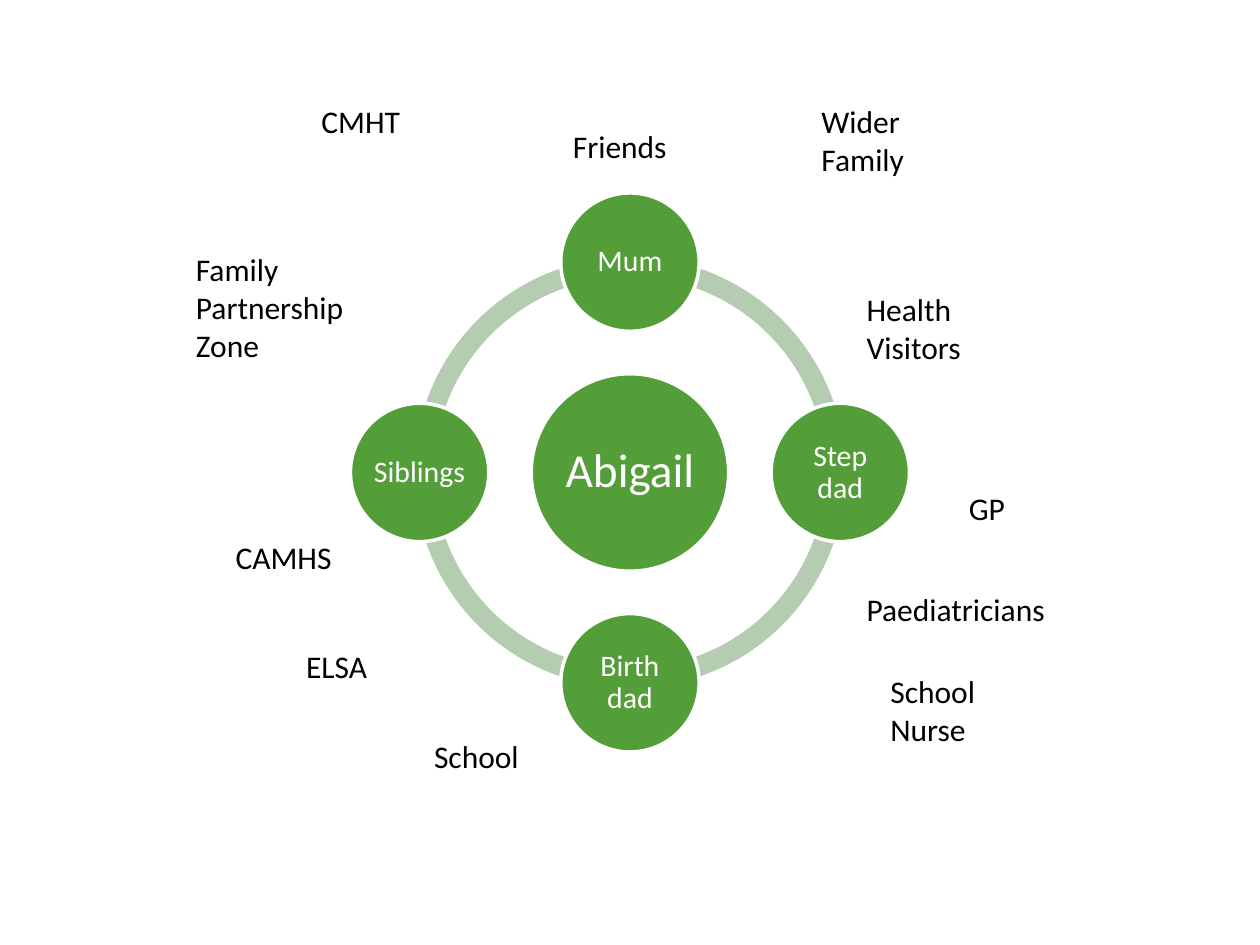
import pptx
import pptx.util
import pptx.dml.color
import pptx.enum.shapes
import pptx.enum.text

Cm, Pt = pptx.util.Cm, pptx.util.Pt
SHAPE = pptx.enum.shapes.MSO_SHAPE
ALIGN = pptx.enum.text.PP_ALIGN
ANCHOR = pptx.enum.text.MSO_ANCHOR

GREEN = pptx.dml.color.RGBColor(0x54, 0x9E, 0x39)
PALE_GREEN = pptx.dml.color.RGBColor(0xB4, 0xCC, 0xAF)
WHITE = pptx.dml.color.RGBColor(0xFF, 0xFF, 0xFF)
BLACK = pptx.dml.color.RGBColor(0x00, 0x00, 0x00)

SLIDE_WIDTH, SLIDE_HEIGHT = 25.4, 19.05
CENTRE_X, CENTRE_Y = SLIDE_WIDTH / 2, SLIDE_HEIGHT / 2
RING_SIZE = 8.69
ORBIT = 4.24


def write(shape, text, size=18, color=BLACK, align=ALIGN.LEFT, anchor=ANCHOR.TOP,
          spacing=1.0, inset=None, indent=0, wrap=True):
    """Fill a shape with one formatted paragraph; inset and indent are in cm."""
    frame = shape.text_frame
    frame.word_wrap = wrap
    frame.vertical_anchor = anchor
    if inset is not None:
        frame.margin_left = frame.margin_right = Cm(inset)
        frame.margin_top = frame.margin_bottom = Cm(inset)
    paragraph = frame.paragraphs[0]
    paragraph.alignment = align
    paragraph.line_spacing = spacing
    if indent:
        paragraph._p.get_or_add_pPr().set("marL", str(Cm(indent)))
    run = paragraph.add_run()
    run.text = text
    run.font.name = "Calibri"
    run.font.size = Pt(size)
    run.font.color.rgb = color


def add_centred(kind, x, y, size, fill):
    """Add a square-framed shape around the point x, y (cm)."""
    shape = slide.shapes.add_shape(
        kind, Cm(x - size / 2), Cm(y - size / 2), Cm(size), Cm(size))
    shape.shadow.inherit = False
    shape.fill.solid()
    shape.fill.fore_color.rgb = fill
    shape.line.fill.background()
    return shape


deck = pptx.Presentation()
deck.slide_width, deck.slide_height = Cm(SLIDE_WIDTH), Cm(SLIDE_HEIGHT)
slide = deck.slides.add_slide(deck.slide_layouts[6])

# Ring of four quarter arcs; a quarter turn is 54 in adjustment units
QUARTER = 54
for start in (2, 1, 0, 3):
    arc = add_centred(SHAPE.BLOCK_ARC, CENTRE_X, CENTRE_Y, RING_SIZE, PALE_GREEN)
    arc.adjustments[0] = start * QUARTER
    arc.adjustments[1] = (start + 1) % 4 * QUARTER
    arc.adjustments[2] = 0.046

# The child in the middle, close family around: direction x, y, diameter, text size
people = [
    ("Abigail", 0, 0, 3.98, 27),
    ("Mum", 0, -1, 2.79, 17),
    ("Step dad", 1, 0, 2.79, 17),
    ("Birth dad", 0, 1, 2.79, 17),
    ("Siblings", -1, 0, 2.79, 17),
]
for person, across, down, diameter, text_size in people:
    circle = add_centred(SHAPE.OVAL, CENTRE_X + across * ORBIT,
                         CENTRE_Y + down * ORBIT, diameter, GREEN)
    circle.line.color.rgb = WHITE
    circle.line.width = Pt(2)
    write(circle, person, size=text_size, color=WHITE, align=ALIGN.CENTER,
          anchor=ANCHOR.MIDDLE, spacing=0.9, inset=0.04)

# Wider network: left, top, width, height, then any special format
network = [
    ("ELSA", 4.5, 12.92, 3.2, 1.03, {"indent": 1.42}),
    ("School Nurse", 17.7, 13.43, 2.8, 1.8, {}),
    ("CMHT", 5.1, 1.93, 3.4, 1.03, {"indent": 1.13}),
    ("Wider Family", 16.31, 1.93, 3.4, 1.8, {}),
    ("Family Partnership Zone", 3.7, 4.92, 4, 2.56, {}),
    ("Health Visitors", 17.22, 5.72, 3.88, 1.8, {}),
    ("CAMHS", 4.5, 10.73, 2.46, 1.03, {"wrap": False}),
    ("Paediatricians", 17.22, 11.76, 4.14, 1.03, {"wrap": False}),
    ("School", 8.5, 14.74, 2.24, 1.03, {"wrap": False}),
    ("Friends", 11.3, 2.44, 2.41, 1.03, {"wrap": False}),
    ("GP", 19.28, 9.73, 1.24, 1.03, {"wrap": False}),
]
for contact, left, top, width, height, style in network:
    label = slide.shapes.add_textbox(Cm(left), Cm(top), Cm(width), Cm(height))
    write(label, contact, **style)

deck.save("out.pptx")
